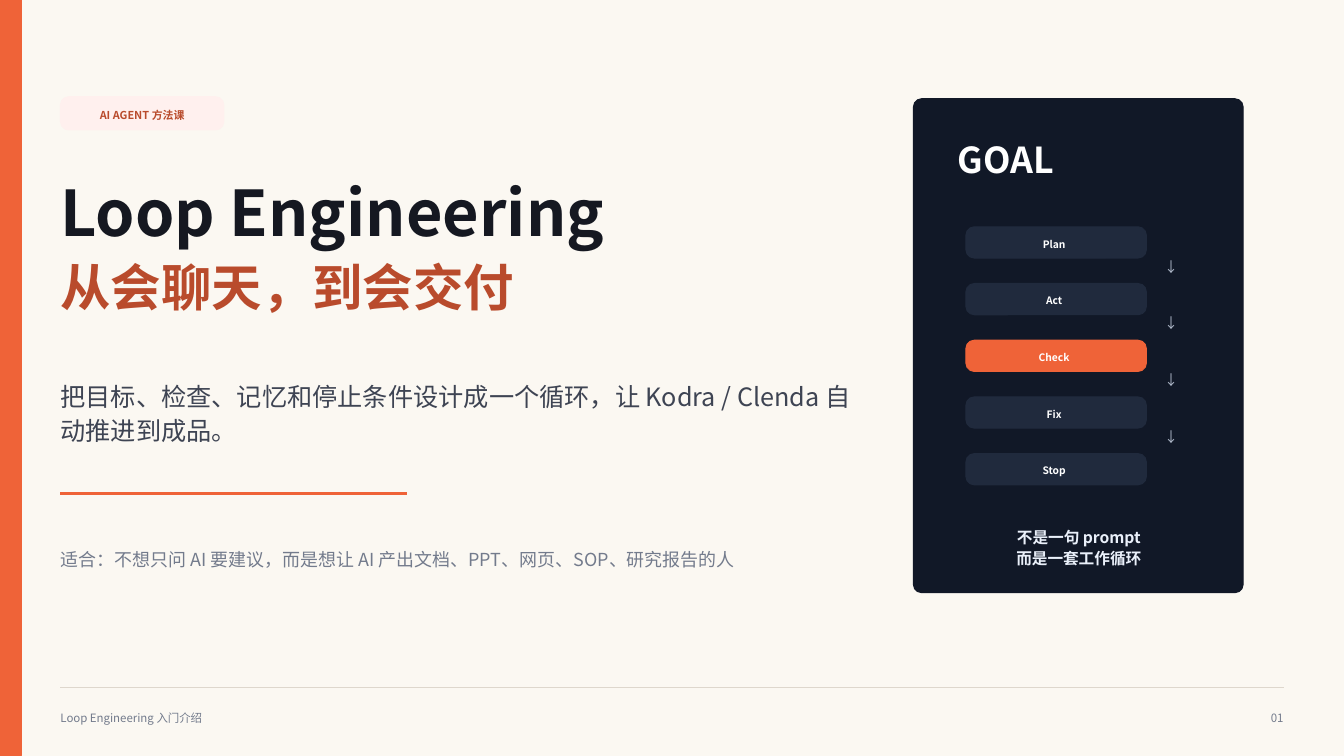
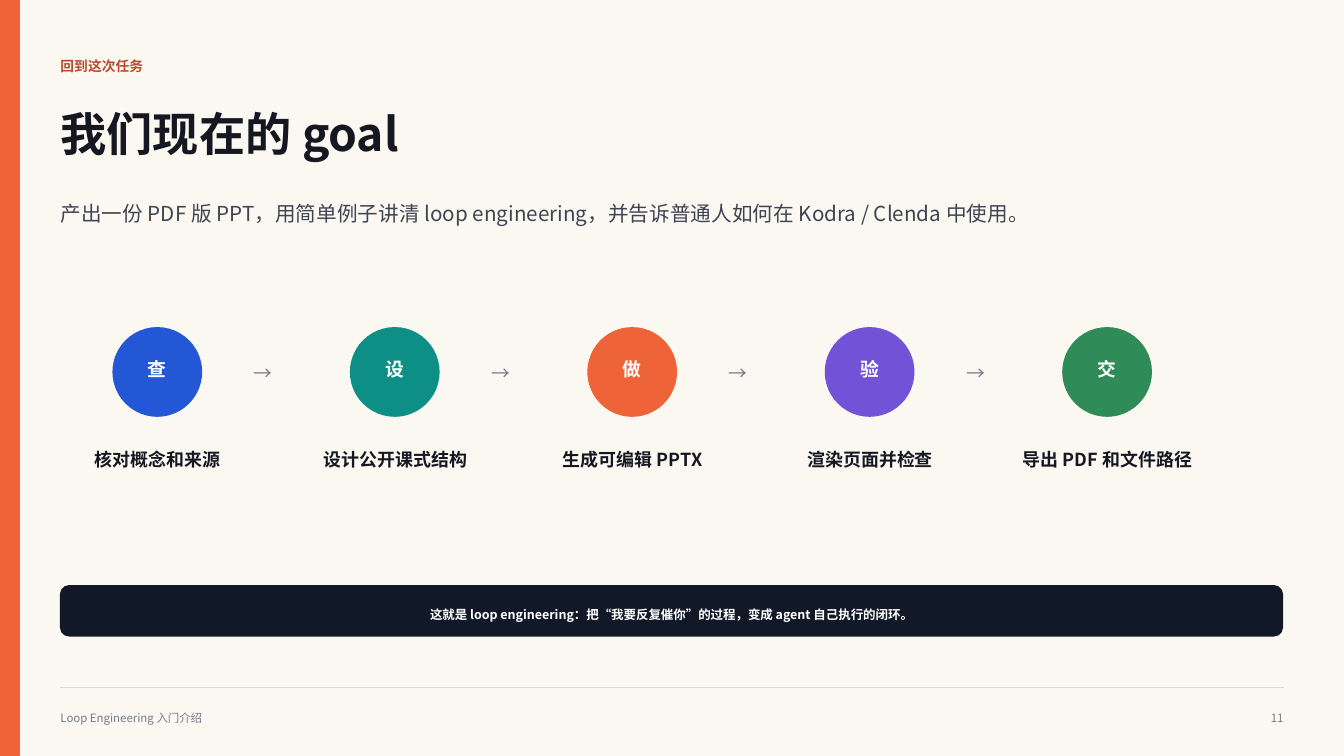
from lxml import etree
from pptx import Presentation
from pptx.dml.color import RGBColor
from pptx.enum.shapes import MSO_CONNECTOR, MSO_SHAPE as Shape
from pptx.enum.text import MSO_ANCHOR, MSO_AUTO_SIZE, PP_ALIGN as Align
from pptx.oxml.ns import qn
from pptx.util import Inches, Pt

# Shared style
FONT = "Noto Sans CJK SC"
PAPER, ORANGE, RUST, BLUSH = "FBF8F2", "EF6338", "B94B2C", "FFF0EE"
INK, BODY, MUTED, RULE = "151821", "3E4453", "737B8C", "DED7CD"
NIGHT, SLATE, MIST, ICE, WHITE = "111827", "202A3D", "AEB7C8", "EAF0FA", "FFFFFF"
BLUE, TEAL, VIOLET, GREEN = "2457D6", "0E8F86", "7253D8", "2F8B57"
LEFT, RIGHT = 0.6, 12.73
TIGHT, FOOT, LOOSE = 0.96, 1.08, 1.12


def rgb(value):
    return RGBColor.from_string(value)


class Deck:
    def __init__(self):
        self.prs = Presentation()
        self.prs.slide_width, self.prs.slide_height = Inches(13.33), Inches(7.5)
        fill = self.prs.slide_master.background.fill
        fill.solid()
        fill.fore_color.rgb = rgb(PAPER)

    def page(self, layout, number, bar=0.19):
        """Start a slide with the side bar and the footer."""
        self.slide = self.prs.slides.add_slide(self.prs.slide_layouts[layout])
        self.shape(Shape.RECTANGLE, 0, 0, bar, 7.5, ORANGE)
        self.rule(LEFT, RIGHT, 6.82, RULE, 0.75)
        self.text("Loop Engineering 入门介绍", LEFT, 7.04, 5.42, 0.25, 8.2, MUTED,
                  spacing=FOOT)
        self.text(number, 12.23, 7.04, 0.5, 0.25, 8.2, MUTED,
                  align=Align.RIGHT, spacing=FOOT)

    def fill_text(self, tf, text, size, color, bold=False, align=Align.LEFT,
                  spacing=LOOSE, insets=(0, 0, 0, 0)):
        """Fill a text frame, one paragraph for each line of text."""
        tf.word_wrap = True
        tf.auto_size = MSO_AUTO_SIZE.NONE
        tf.vertical_anchor = MSO_ANCHOR.TOP
        tf.margin_left, tf.margin_top, tf.margin_right, tf.margin_bottom = map(Inches, insets)
        for i, line in enumerate(text.split("\n")):
            p = tf.add_paragraph() if i else tf.paragraphs[0]
            p.alignment, p.line_spacing, p.space_before = align, spacing, Pt(0)
            r = p.add_run()
            r.text = line
            r.font.size, r.font.bold, r.font.name = Pt(size), bold, FONT
            r.font.color.rgb = rgb(color)
            etree.SubElement(r.font._element, qn("a:ea"), typeface=FONT)

    def text(self, text, x, y, w, h, size, color, **style):
        sp = self.slide.shapes.add_textbox(Inches(x), Inches(y), Inches(w), Inches(h))
        self.fill_text(sp.text_frame, text, size, color, **style)

    def placeholder(self, index, text, x, y, w, h, size, color, **style):
        sp = self.slide.placeholders[index]
        sp.left, sp.top, sp.width, sp.height = map(Inches, (x, y, w, h))
        self.fill_text(sp.text_frame, text, size, color, **style)
        return sp

    def title(self, text, y, w, h, size):
        self.placeholder(0, text, LEFT, y, w, h, size, INK, bold=True, spacing=TIGHT)

    def lead(self, text, y, w, h, size):
        """Opening sentence in the body placeholder, without a bullet."""
        sp = self.placeholder(1, text, LEFT, y, w, h, size, BODY)
        for p in sp.text_frame.paragraphs:
            pPr = p._p.get_or_add_pPr()
            pPr.set("marL", "0")
            pPr.set("indent", "0")
            etree.SubElement(pPr, qn("a:buNone"))

    def shape(self, kind, x, y, w, h, color, radius=None):
        sp = self.slide.shapes.add_shape(kind, Inches(x), Inches(y), Inches(w), Inches(h))
        sp.shadow.inherit = False
        sp.fill.solid()
        sp.fill.fore_color.rgb = sp.line.color.rgb = rgb(color)
        sp.line.width = Pt(0.75)
        if radius is not None:
            sp.adjustments[0] = radius
        return sp

    def label(self, sp, text, size, color, top, right=0):
        """Centred bold text inside a shape."""
        self.fill_text(sp.text_frame, text, size, color, bold=True, align=Align.CENTER,
                       insets=(0, top, right, 0))

    def rule(self, x1, x2, y, color, width):
        line = self.slide.shapes.add_connector(
            MSO_CONNECTOR.STRAIGHT, Inches(x1), Inches(y), Inches(x2), Inches(y))
        line.line.color.rgb = rgb(color)
        line.line.width = Pt(width)
        etree.SubElement(line._element.spPr, qn("a:effectLst"))


def cover(deck):
    deck.page(0, "01", bar=0.21)

    # Heading and audience
    tag = deck.shape(Shape.ROUNDED_RECTANGLE, LEFT, 0.96, 1.62, 0.33, BLUSH, 0.25)
    deck.label(tag, "AI AGENT 方法课", 7.8, RUST, top=0.08)
    deck.title("Loop Engineering", 1.77, 8.12, 0.79, 45)
    deck.text("从会聊天，到会交付", LEFT, 2.58, 8.12, 0.79, 36, RUST,
              bold=True, spacing=TIGHT)
    deck.lead("把目标、检查、记忆和停止条件设计成一个循环，让 Kodra / Clenda 自动推进到成品。",
              3.75, 7.92, 0.73, 18)
    deck.rule(LEFT, 4.04, 4.9, ORANGE, 2.25)
    deck.text("适合：不想只问 AI 要建议，而是想让 AI 产出文档、PPT、网页、SOP、研究报告的人",
              LEFT, 5.42, 8.44, 0.44, 12.8, MUTED)

    # Goal panel with the loop steps
    deck.shape(Shape.ROUNDED_RECTANGLE, 9.06, 0.98, 3.27, 4.9, NIGHT, 0.025)
    deck.text("GOAL", 9.5, 1.4, 2.21, 0.5, 25.5, WHITE, bold=True, spacing=TIGHT)
    steps = ["Plan", "Act", "Check", "Fix", "Stop"]
    pitch = 2.25 / (len(steps) - 1)
    for i, step in enumerate(steps):
        y = 2.25 + i * pitch
        color = ORANGE if step == "Check" else SLATE
        sp = deck.shape(Shape.ROUNDED_RECTANGLE, 9.58, y, 1.79, 0.31, color, 0.27)
        deck.label(sp, step, 7.3, WHITE, top=0.07, right=0.04)
        if i < len(steps) - 1:
            deck.text("↓", 11.44, y + 0.29, 0.35, 0.19, 10, MIST, align=Align.CENTER)
    deck.text("不是一句 prompt\n而是一套工作循环", 9.5, 5.21, 2.4, 0.42, 11.2, ICE,
              bold=True, align=Align.CENTER)


def current_goal(deck):
    deck.page(1, "11")

    # Heading
    deck.text("回到这次任务", LEFT, 0.56, 8.96, 0.25, 9.8, RUST, bold=True, spacing=FOOT)
    deck.title("我们现在的 goal", 1.08, 6.67, 0.58, 33)
    deck.lead("产出一份 PDF 版 PPT，用简单例子讲清 loop engineering，"
              "并告诉普通人如何在 Kodra / Clenda 中使用。", 1.96, 9.79, 0.54, 14.7)

    # Five stages
    stages = [
        ("查", "核对概念和来源", BLUE),
        ("设", "设计公开课式结构", TEAL),
        ("做", "生成可编辑 PPTX", ORANGE),
        ("验", "渲染页面并检查", VIOLET),
        ("交", "导出 PDF 和文件路径", GREEN),
    ]
    pitch = 9.42 / (len(stages) - 1)
    for i, (mark, caption, color) in enumerate(stages):
        x = 1.12 + i * pitch
        sp = deck.shape(Shape.OVAL, x, 3.25, 0.88, 0.88, color)
        deck.label(sp, mark, 13.4, WHITE, top=0.14)
        deck.text(caption, x - 0.41, 4.42, 1.71, 0.25, 12.8, INK,
                  bold=True, align=Align.CENTER)
        if i < len(stages) - 1:
            deck.text("→", x + 1.28, 3.56, 0.42, 0.25, 13.4, MUTED, align=Align.CENTER)

    # Closing banner
    banner = deck.shape(Shape.ROUNDED_RECTANGLE, LEFT, 5.81, 12.12, 0.5, NIGHT, 0.17)
    deck.label(banner, "这就是 loop engineering：把“我要反复催你”的过程，变成 agent 自己执行的闭环。",
               8.9, WHITE, top=0.17)


def main():
    deck = Deck()
    cover(deck)
    current_goal(deck)
    deck.prs.save("out.pptx")


if __name__ == "__main__":
    main()
